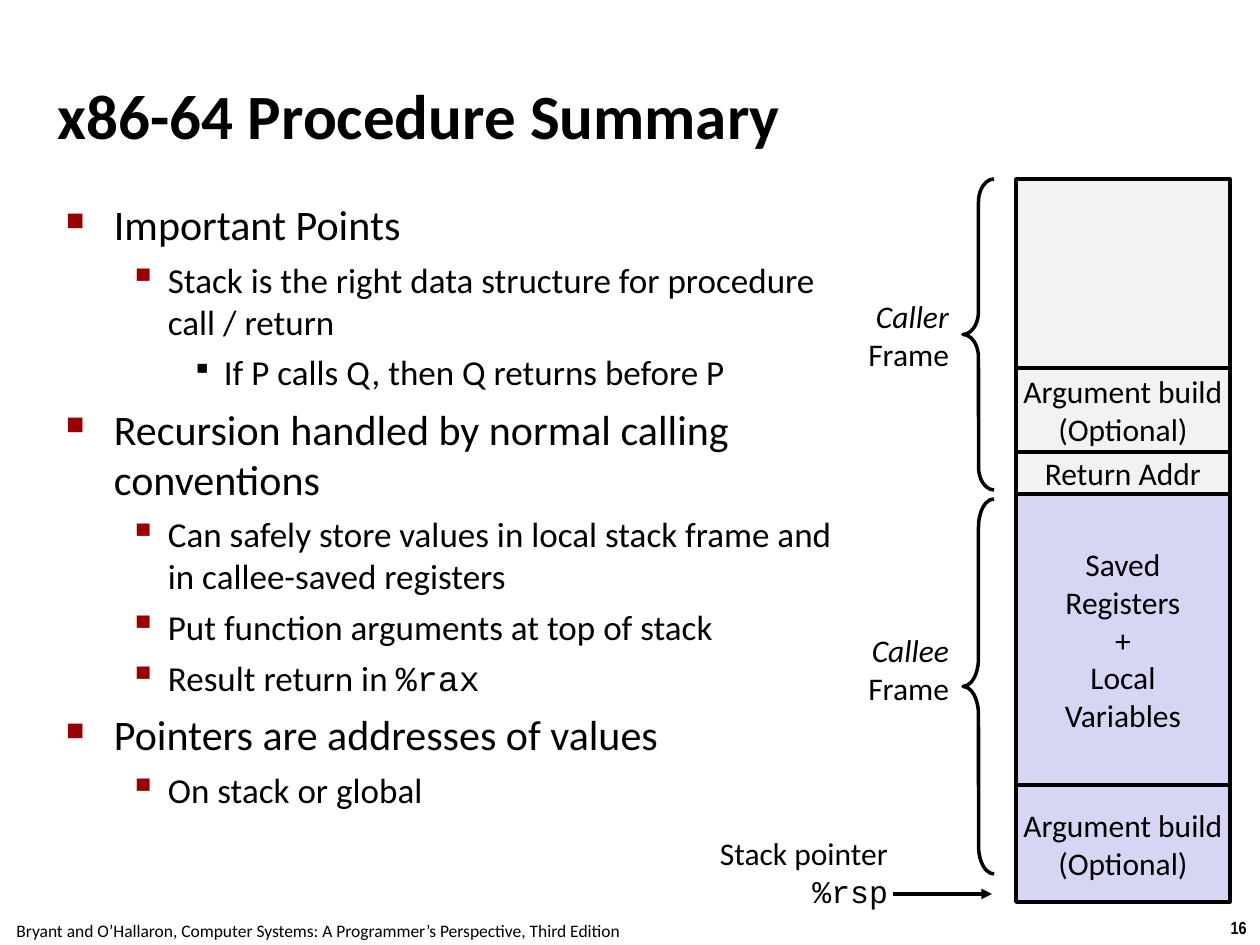
from dataclasses import dataclass

from lxml import etree
from pptx import Presentation
from pptx import util as u
from pptx.dml.color import RGBColor
from pptx.enum import shapes, text
from pptx.oxml.ns import qn

PX = 914400 / 126


@dataclass(frozen=True)
class Theme:
    ink: str = "000000"
    bullet: str = "990000"
    caller: str = "F2F2F2"
    callee: str = "D6D6F4"
    body_font: str = "Calibri"
    code_font: str = "Courier New"
    number_font: str = "Arial Narrow"
    title: int = 36
    point: int = 24
    detail: int = 20
    label: int = 18
    footer: int = 10
    line: int = 2


THEME = Theme()
LEFT, CENTER, RIGHT = text.PP_ALIGN.LEFT, text.PP_ALIGN.CENTER, text.PP_ALIGN.RIGHT

TITLE = "x86-64 Procedure Summary"
FOOTER = ("Bryant and O’Hallaron, Computer Systems: "
          "A Programmer’s Perspective, Third Edition")
PAGE = "16"

# Words between backticks are code, words between underscores are italic.
POINTS = [
    (0, "Important Points"),
    (1, "Stack is the right data structure for procedure call / return"),
    (2, "If P calls Q, then Q returns before P"),
    (0, "Recursion handled by normal calling conventions"),
    (1, "Can safely store values in local stack frame and in callee-saved registers"),
    (1, "Put function arguments at top of stack"),
    (1, "Result return in `%rax`"),
    (0, "Pointers are addresses of values"),
    (1, "On stack or global"),
]
# Level: size, left px, hanging px, space before pt, bullet, bullet colour, bullet percent
LEVELS = [
    (THEME.point, 48, 48, 6, "■", THEME.bullet, 60),
    (THEME.detail, 102, 39, 5, "▪", THEME.bullet, 110),
    (THEME.detail, 158, 32, 5, "▪", THEME.ink, 80),
]
STACK_LEFT, STACK_TOP, STACK_WIDTH = 1016, 179, 214
STACK = [  # height, fill, lines
    (189, THEME.caller, []),
    (84, THEME.caller, ["Argument build", "(Optional)"]),
    (42, THEME.caller, ["Return Addr"]),
    (291, THEME.callee, ["Saved", "Registers", "+", "Local", "Variables"]),
    (117, THEME.callee, ["Argument build", "(Optional)"]),
]
FRAMES = [  # lines, label top, brace top, brace height
    (["_Caller_", "Frame"], 292, 179, 311),
    (["_Callee_", "Frame"], 626, 499, 375),
]
BRACE_LEFT, BRACE_WIDTH = 963, 31
LABEL_LEFT, LABEL_WIDTH, LABEL_HEIGHT = 859, 95, 87
POINTER = ["Stack pointer", "`%rsp`"]


def px(*values):
    return [u.Emu(round(value * PX)) for value in values]


def color(value):
    return RGBColor.from_string(value)


def split_runs(line):
    """Yield (words, is_code, is_italic) for one marked-up line."""
    for i, part in enumerate(line.split("`")):
        for j, words in enumerate(part.split("_")):
            if words:
                yield words, i % 2 == 1, j % 2 == 1


def write(shape, lines, size=THEME.label, font=THEME.body_font, bold=False, align=LEFT,
          anchor=text.MSO_ANCHOR.TOP, inset=(5, 5), wrap=True):
    frame = shape.text_frame
    frame.word_wrap = wrap
    frame.vertical_anchor = anchor
    frame.margin_left, frame.margin_top = px(*inset)
    frame.margin_right, frame.margin_bottom = px(*inset)
    for index, line in enumerate(lines):
        paragraph = frame.add_paragraph() if index else frame.paragraphs[0]
        paragraph.alignment = align
        for words, is_code, is_italic in split_runs(line):
            run = paragraph.add_run()
            run.text = words
            run.font.name = THEME.code_font if is_code else font
            run.font.size = u.Pt(size)
            run.font.bold = bold
            run.font.italic = is_italic
            run.font.color.rgb = color(THEME.ink)
    return frame


def add_text(slide, box, lines, **style):
    return write(slide.shapes.add_textbox(*px(*box)), lines, **style)


def add_outlined(slide, kind, box, fill=None):
    shape = slide.shapes.add_shape(kind, *px(*box))
    shape.shadow.inherit = False
    if fill:
        shape.fill.solid()
        shape.fill.fore_color.rgb = color(fill)
    else:
        shape.fill.background()
    shape.line.color.rgb = color(THEME.ink)
    shape.line.width = u.Pt(THEME.line)
    return shape


def set_level(paragraph, level):
    size, left, hanging, before, mark, mark_color, percent = LEVELS[level]
    paragraph.level = level
    paragraph.space_before = u.Pt(before)
    for run in paragraph.runs:
        run.font.size = u.Pt(size)
    properties = paragraph._p.get_or_add_pPr()
    margin, indent = px(left, -hanging)
    properties.set("marL", str(margin))
    properties.set("indent", str(indent))
    bullet_color = etree.SubElement(properties, qn("a:buClr"))
    etree.SubElement(bullet_color, qn("a:srgbClr"), val=mark_color)
    etree.SubElement(properties, qn("a:buSzPct"), val=str(percent * 1000))
    etree.SubElement(properties, qn("a:buChar"), char=mark)


def add_points(slide):
    frame = add_text(slide, (53, 193, 809, 721), [line for _, line in POINTS], inset=(13, 6))
    for paragraph, (level, _) in zip(frame.paragraphs, POINTS):
        set_level(paragraph, level)


def add_stack(slide):
    top = STACK_TOP
    for height, fill, lines in STACK:
        box = (STACK_LEFT, top, STACK_WIDTH, height)
        cell = add_outlined(slide, shapes.MSO_SHAPE.RECTANGLE, box, fill)
        write(cell, lines, align=CENTER, anchor=text.MSO_ANCHOR.MIDDLE, inset=(0, 0))
        top += height


def add_frames(slide):
    for lines, label_top, top, height in FRAMES:
        add_text(slide, (LABEL_LEFT, label_top, LABEL_WIDTH, LABEL_HEIGHT), lines,
                 align=RIGHT, wrap=False)
        brace = add_outlined(slide, shapes.MSO_SHAPE.LEFT_BRACE,
                             (BRACE_LEFT, top, BRACE_WIDTH, height))
        brace.adjustments[0] = round(height / BRACE_WIDTH / 13.3, 2)


def add_pointer(slide):
    add_text(slide, (689, 829, 204, 84), POINTER, align=RIGHT)
    arrow = slide.shapes.add_connector(shapes.MSO_CONNECTOR.STRAIGHT, *px(893, 894, 992, 894))
    arrow.line.color.rgb = color(THEME.ink)
    arrow.line.width = u.Pt(THEME.line)
    etree.SubElement(arrow.line._get_or_add_ln(), qn("a:tailEnd"), type="triangle")
    etree.SubElement(arrow._element.spPr, qn("a:effectLst"))


def main():
    presentation = Presentation()
    presentation.slide_width, presentation.slide_height = px(1260, 945)
    slide = presentation.slides.add_slide(presentation.slide_layouts[6])
    small = dict(size=THEME.footer, align=CENTER, inset=(13, 6), wrap=False)
    add_text(slide, (1217, 911, 43, 34), [PAGE], font=THEME.number_font, bold=True, **small)
    add_text(slide, (-2, 914, 640, 34), [FOOTER], **small)
    add_text(slide, (53, 35, 1155, 158), [TITLE], size=THEME.title, bold=True,
             anchor=text.MSO_ANCHOR.MIDDLE)
    add_points(slide)
    add_stack(slide)
    add_frames(slide)
    add_pointer(slide)
    presentation.save("out.pptx")


if __name__ == "__main__":
    main()
